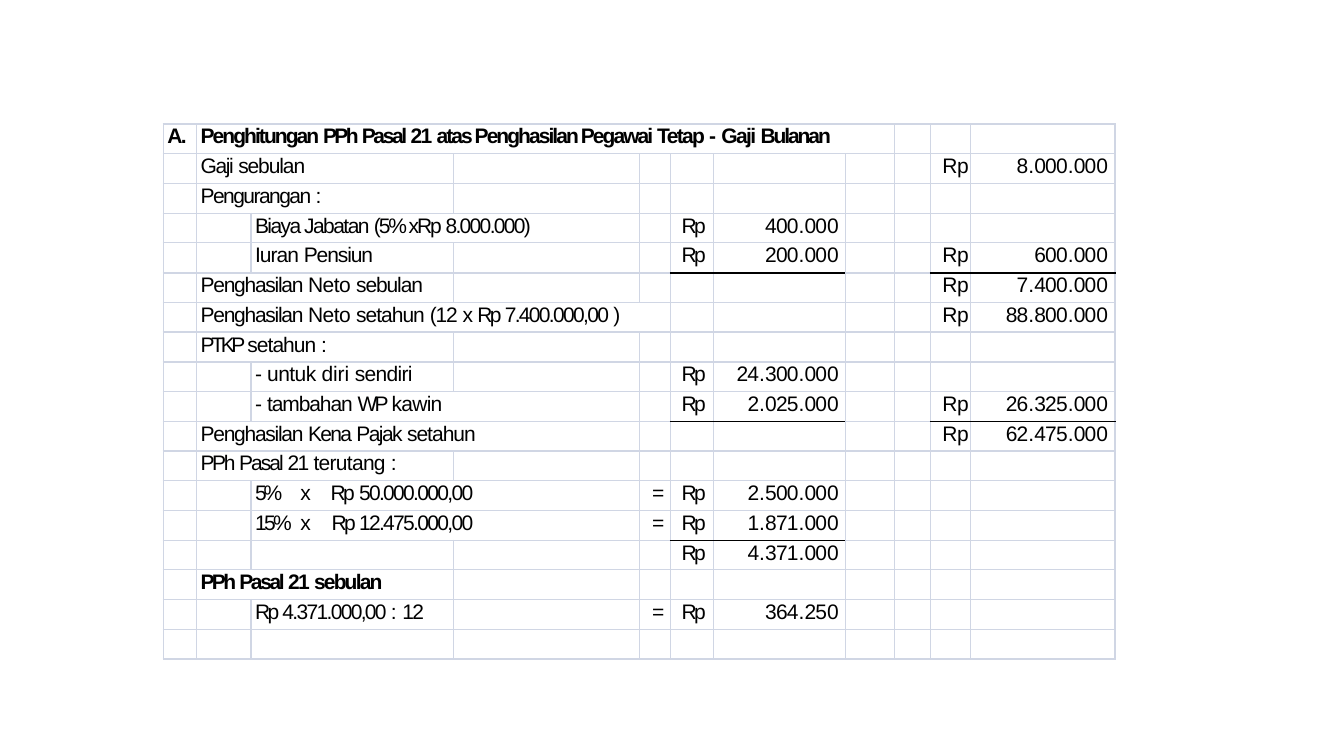
from dataclasses import dataclass

from lxml.etree import SubElement
from pptx import Presentation
from pptx.dml.color import RGBColor
from pptx.enum.text import PP_ALIGN
from pptx.oxml.ns import qn
from pptx.util import Inches, Pt


@dataclass(frozen=True)
class Theme:
    font: str = "Arial"
    size: float = 15
    empty_size: float = 12
    text: str = "000000"
    grid: str = "D0D6E4"
    total: str = "000000"
    thin: float = 1
    thick: float = 1.5


theme = Theme()
NO_STYLE = "{2D5ABB26-0587-4C30-8999-92F81FD0307C}"
ROW_COUNT = 18
TABLE_HEIGHT = 5.31
COLUMN_WIDTHS = [0.33, 0.54, 2.01, 1.84, 0.31, 0.43, 1.31, 0.48, 0.36, 0.4, 1.43]
EQUALS, INNER_RP, INNER_AMOUNT, OUTER_RP, OUTER_AMOUNT = 4, 5, 6, 9, 10

# row, first column, columns spanned, [(text, letter spacing in points)]
LABELS = [
    (0, 0, 1, [("A.", -1.2)]),
    (0, 1, 7, [("Penghitungan ", -1.4), ("PPh ", -1.9), ("Pasal ", -1.7), ("21 ", -1.2),
               ("atas Penghasilan Pegawai ", -1.4), ("Tetap ", -1.2), ("- ", -0.5),
               ("Gaji ", -1.1), ("Bulanan", -1.5)]),
    (1, 1, 2, [("Gaji ", -1), ("sebulan", -0.8)]),
    (2, 1, 2, [("Pengurangan ", -1.1), (":", -0.2)]),
    (3, 2, 2, [("Biaya Jabatan ", -1.1), ("(5% xRp ", -1.5), ("8.000.000)", -1.2)]),
    (4, 2, 1, [("Iuran ", -0.7), ("Pensiun", -0.8)]),
    (5, 1, 2, [("Penghasilan ", -0.9), ("Neto ", -0.4), ("sebulan", -0.8)]),
    (6, 1, 4, [("Penghasilan ", -0.9), ("Neto ", -0.4), ("setahun ", -0.7), ("(12 ", -0.8),
               ("x ", -1.1), ("Rp ", -1.9), ("7.400.000,00 ", -1.2), (")", -0.6)]),
    (7, 1, 2, [("PTKP ", -2.4), ("setahun ", -0.7), (":", -0.2)]),
    (8, 2, 1, [("- ", -0.5), ("untuk ", -0.4), ("diri ", -0.1), ("sendiri", -0.5)]),
    (9, 2, 2, [("- ", -0.5), ("tambahan ", -0.8), ("WP ", -1.9), ("kawin", -0.5)]),
    (10, 1, 3, [("Penghasilan ", -0.9), ("Kena ", -1.2), ("Pajak ", -1.1), ("setahun", -0.7)]),
    (11, 1, 2, [("PPh ", -1.7), ("Pasal ", -1.4), ("21 ", -1.2), ("terutang ", -0.5), (":", -0.2)]),
    (12, 2, 2, [("5%\t", -2.2), ("x\t", -1.1), ("Rp", -1.9), (" 50.000.000,00", -1.2)]),
    (13, 2, 2, [("15%\t", -1.9), ("x\t", -1.1), ("Rp ", -1.9), ("12.475.000,00", -1.2)]),
    (15, 1, 2, [("PPh ", -1.9), ("Pasal ", -1.7), ("21 ", -1.2), ("sebulan", -1.3)]),
    (16, 2, 1, [("Rp ", -1.9), ("4.371.000,00 ", -1.2), (": ", -0.2), ("12", -1.2)]),
]
BOLD_ROWS = {0, 15}
TAB_STOPS = {12: [0.45, 0.75], 13: [0.45, 0.76]}
EQUALS_ROWS = [12, 13, 16]
INNER_AMOUNTS = {3: "400.000", 4: "200.000", 8: "24.300.000", 9: "2.025.000",
                 12: "2.500.000", 13: "1.871.000", 14: "4.371.000", 16: "364.250"}
OUTER_AMOUNTS = {1: "8.000.000", 4: "600.000", 5: "7.400.000", 6: "88.800.000",
                 9: "26.325.000", 10: "62.475.000"}

# Rows with a total line or a thick line along their bottom edge
INNER_COLUMNS = {INNER_RP, INNER_AMOUNT}
ALL_SUMS = INNER_COLUMNS | {OUTER_RP, OUTER_AMOUNT}
TOTAL_LINES = {4: ALL_SUMS, 9: ALL_SUMS, 13: INNER_COLUMNS}
THICK_ROWS = {4, 7}


def add_border(cell, side, color, width):
    line = SubElement(cell._tc.get_or_add_tcPr(), qn(f"a:ln{side}"), w=str(Pt(width)))
    SubElement(SubElement(line, qn("a:solidFill")), qn("a:srgbClr"), val=color)


def write_cell(cell, runs, align=PP_ALIGN.LEFT, left=0, right=0, bold=False, tabs=()):
    paragraph = cell.text_frame.paragraphs[0]
    paragraph.alignment = align
    properties = paragraph._p.get_or_add_pPr()
    properties.set("marL", str(Inches(left)))
    properties.set("marR", str(Inches(right)))
    if tabs:
        tab_list = SubElement(properties, qn("a:tabLst"))
        for position in tabs:
            SubElement(tab_list, qn("a:tab"), pos=str(Inches(position)), algn="l")
    paragraph.font.name = theme.font
    paragraph.font.size = Pt(theme.size)
    paragraph.font.bold = bold
    paragraph.font.color.rgb = RGBColor.from_string(theme.text)
    for text, spacing in runs:
        run = paragraph.add_run()
        run.text = text
        run._r.get_or_add_rPr().set("spc", str(round(spacing * 100)))


presentation = Presentation()
presentation.slide_width = Inches(13.33)
presentation.slide_height = Inches(7.5)
slide = presentation.slides.add_slide(presentation.slide_layouts[6])

table = slide.shapes.add_table(
    ROW_COUNT, len(COLUMN_WIDTHS), Inches(1.62), Inches(1.23),
    Inches(sum(COLUMN_WIDTHS)), Inches(TABLE_HEIGHT)).table
table.first_row = False
table.horz_banding = False
table._tbl.tblPr.find(qn("a:tableStyleId")).text = NO_STYLE
for column, width in zip(table.columns, COLUMN_WIDTHS):
    column.width = Inches(width)

for row_index, row in enumerate(table.rows):
    row.height = Inches(TABLE_HEIGHT / ROW_COUNT)
    for column_index, cell in enumerate(row.cells):
        cell.margin_left = cell.margin_right = cell.margin_bottom = 0
        cell.margin_top = Inches(0.01)
        # The end mark sets the height of a cell without text
        SubElement(cell.text_frame.paragraphs[0]._p, qn("a:endParaRPr"),
                   sz=str(theme.empty_size * 100))
        for side in "LR":
            add_border(cell, side, theme.grid, theme.thin)
        for side, upper_row in (("T", row_index - 1), ("B", row_index)):
            is_total = column_index in TOTAL_LINES.get(upper_row, ())
            add_border(cell, side, theme.total if is_total else theme.grid,
                       theme.thick if upper_row in THICK_ROWS else theme.thin)
        cell.fill.background()

for row, column, span, runs in LABELS:
    cell = table.cell(row, column)
    if span > 1:
        cell.merge(table.cell(row, column + span - 1))
    write_cell(cell, runs, left=0.04, bold=row in BOLD_ROWS, tabs=TAB_STOPS.get(row, ()))

for row in EQUALS_ROWS:
    write_cell(table.cell(row, EQUALS), [("=", 0)], PP_ALIGN.RIGHT, right=0.06)
for row in INNER_AMOUNTS:
    write_cell(table.cell(row, INNER_RP), [("Rp", -1.9)], PP_ALIGN.CENTER, left=0.03)
for row in OUTER_AMOUNTS:
    write_cell(table.cell(row, OUTER_RP), [("Rp", -0.2)], PP_ALIGN.RIGHT, right=0.02)

for column, amounts in ((INNER_AMOUNT, INNER_AMOUNTS), (OUTER_AMOUNT, OUTER_AMOUNTS)):
    for row, amount in amounts.items():
        *groups, last_group = amount.split(".")
        runs = [run for group in groups for run in ((group, -0.6), (".", 0.1))]
        runs += [(last_group[:-1], -0.6), (last_group[-1], 0)]
        write_cell(table.cell(row, column), runs, PP_ALIGN.RIGHT, right=0.07)

presentation.save("out.pptx")
